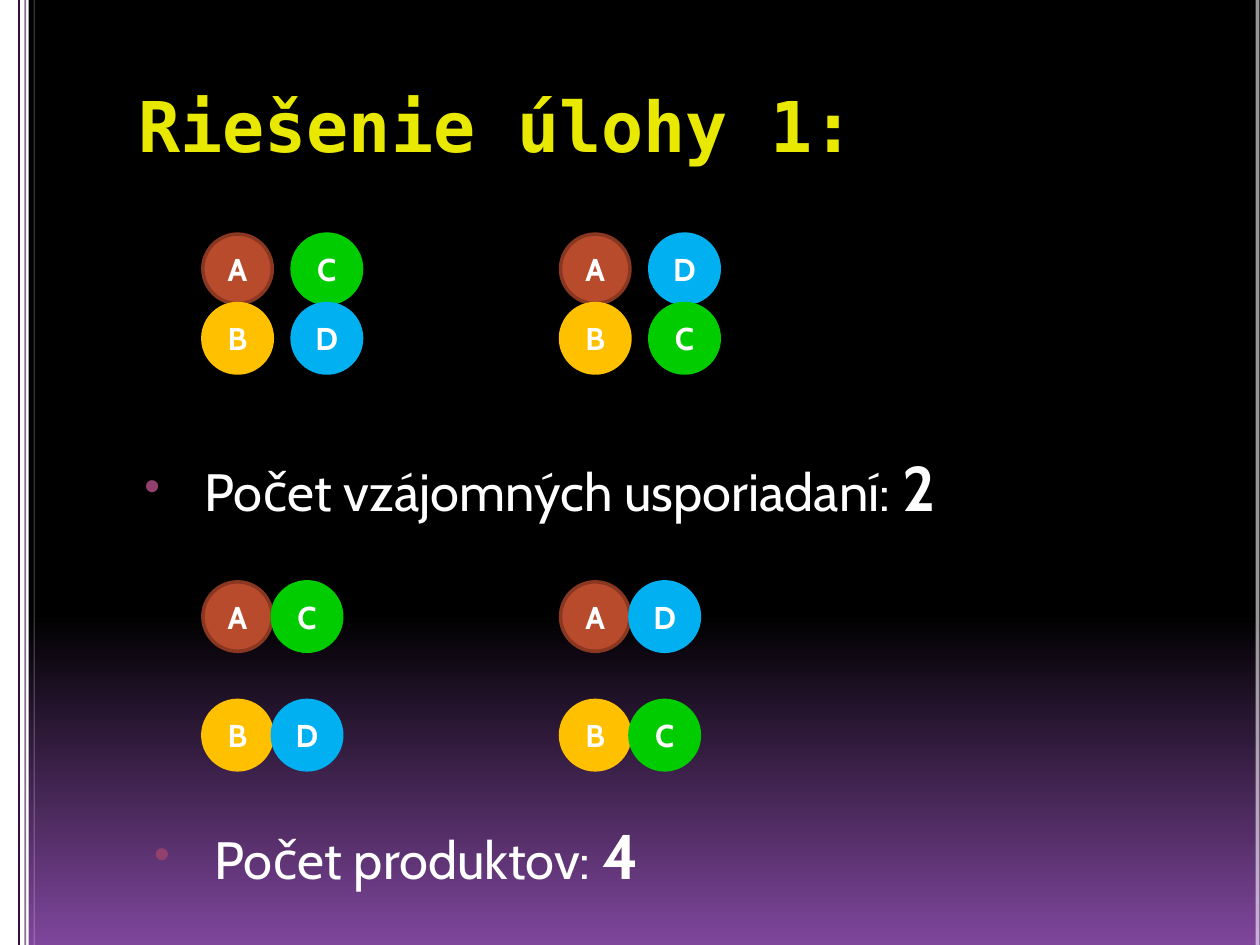
from lxml.etree import SubElement
from pptx import Presentation
from pptx.dml.color import RGBColor
from pptx.enum.shapes import MSO_CONNECTOR, MSO_SHAPE
from pptx.enum.text import MSO_ANCHOR, PP_ALIGN
from pptx.oxml.ns import qn
from pptx.util import Cm, Pt


def color(hex_string):
    return RGBColor.from_string(hex_string)


def add_span(para, text, size, font="Cabin", fill="FFFFFF", bold=False):
    span = para.add_run()
    span.text = text
    span.font.name = font
    span.font.size = Pt(size)
    span.font.bold = bold
    span.font.color.rgb = color(fill)


deck = Presentation()
deck.slide_width, deck.slide_height = Cm(25.4), Cm(19.05)
page = deck.slides.add_slide(deck.slide_layouts[6])

# Background: black down to 65 %, then fading to purple
background = page.background.fill
background.gradient()
background.gradient_angle = 270
for stop, position, shade in zip(background.gradient_stops, (0.65, 1), ("000000", "7F469C")):
    stop.position = position
    stop.color.rgb = color(shade)

# White strip and vertical rules at the edges
strip = page.shapes.add_shape(MSO_SHAPE.RECTANGLE, 0, 0, Cm(0.58), Cm(19.05))
strip.shadow.inherit = False
strip.fill.solid()
strip.fill.fore_color.rgb = color("FFFFFF")
strip.line.fill.background()

for x, shade, width, opacity in [
    (0.38, "340F40", 1, 100),
    (0.51, "340F40", 1, 59),
    (0.69, "FFFFFF", 0.25, 59),
    (25.35, "FFFFFF", 2.25, 59),
]:
    rule = page.shapes.add_connector(MSO_CONNECTOR.STRAIGHT, Cm(x), 0, Cm(x), Cm(19.05))
    rule.line.width = Pt(width)
    rule.line.color.rgb = color(shade)
    properties = rule._element.spPr
    SubElement(properties, qn("a:effectLst"))
    if opacity < 100:
        rgb = properties.find(".//" + qn("a:srgbClr"))
        SubElement(rgb, qn("a:alpha"), val=str(opacity * 1000))

# Title
title = page.shapes.add_textbox(Cm(2.54), Cm(1.42), Cm(21.6), Cm(2.54))
title.text_frame.word_wrap = True
title.text_frame.margin_top = Cm(0.25)
add_span(title.text_frame.paragraphs[0], "Riešenie úlohy 1:", 40, "DejaVu Sans Mono", "E8E800", True)

# Bulleted results
for left, top, label, count in [
    (2.49, 8.92, " Počet vzájomných usporiadaní: ", "2"),
    (2.69, 16.33, " Počet produktov: ", "4"),
]:
    box = page.shapes.add_textbox(Cm(left), Cm(top), Cm(21.6), Cm(2.6))
    box.text_frame.word_wrap = True
    para = box.text_frame.paragraphs[0]
    para.space_before = Pt(7)
    settings = para._p.get_or_add_pPr()
    settings.set("marL", str(Cm(1.14)))
    settings.set("indent", str(Cm(-0.97)))
    bullet_color = SubElement(settings, qn("a:buClr"))
    SubElement(bullet_color, qn("a:srgbClr"), val="92406E")
    SubElement(settings, qn("a:buSzPct"), val="85000")
    SubElement(settings, qn("a:buFont"), typeface="Arial")
    SubElement(settings, qn("a:buChar"), char="•")
    add_span(para, label, 30)
    add_span(para, count, 36, bold=True)

# Groups of lettered balls: fill and outline belong to the letter
BALL = 1.4
PAIR_GAP = 1.8
BALL_COLORS = {
    "A": ("B94B2D", "893721"),
    "B": ("FFC000", "FFC000"),
    "C": ("00CC00", "00CC00"),
    "D": ("00B0F0", "00B0F0"),
}
LEFT, RIGHT = 4.09, 11.3
for left, top, columns, step in [
    (LEFT, 4.72, ("AB", "CD"), PAIR_GAP),
    (RIGHT, 4.72, ("AB", "DC"), PAIR_GAP),
    (LEFT, 11.73, ("A", "C"), BALL),
    (LEFT, 14.12, ("B", "D"), BALL),
    (RIGHT, 11.73, ("A", "D"), BALL),
    (RIGHT, 14.12, ("B", "C"), BALL),
]:
    group = page.shapes.add_group_shape()
    for column, letters in enumerate(columns):
        for row, letter in enumerate(letters):
            ball = group.shapes.add_shape(
                MSO_SHAPE.OVAL, Cm(left + column * step), Cm(top + row * BALL), Cm(BALL), Cm(BALL))
            ball.shadow.inherit = False
            fill, outline = BALL_COLORS[letter]
            ball.fill.solid()
            ball.fill.fore_color.rgb = color(fill)
            ball.line.color.rgb = color(outline)
            ball.line.width = Pt(2)
            frame = ball.text_frame
            frame.margin_left = frame.margin_right = 0
            frame.vertical_anchor = MSO_ANCHOR.MIDDLE
            para = frame.paragraphs[0]
            para.alignment = PP_ALIGN.CENTER
            add_span(para, letter, 18, bold=True)

deck.save("out.pptx")
